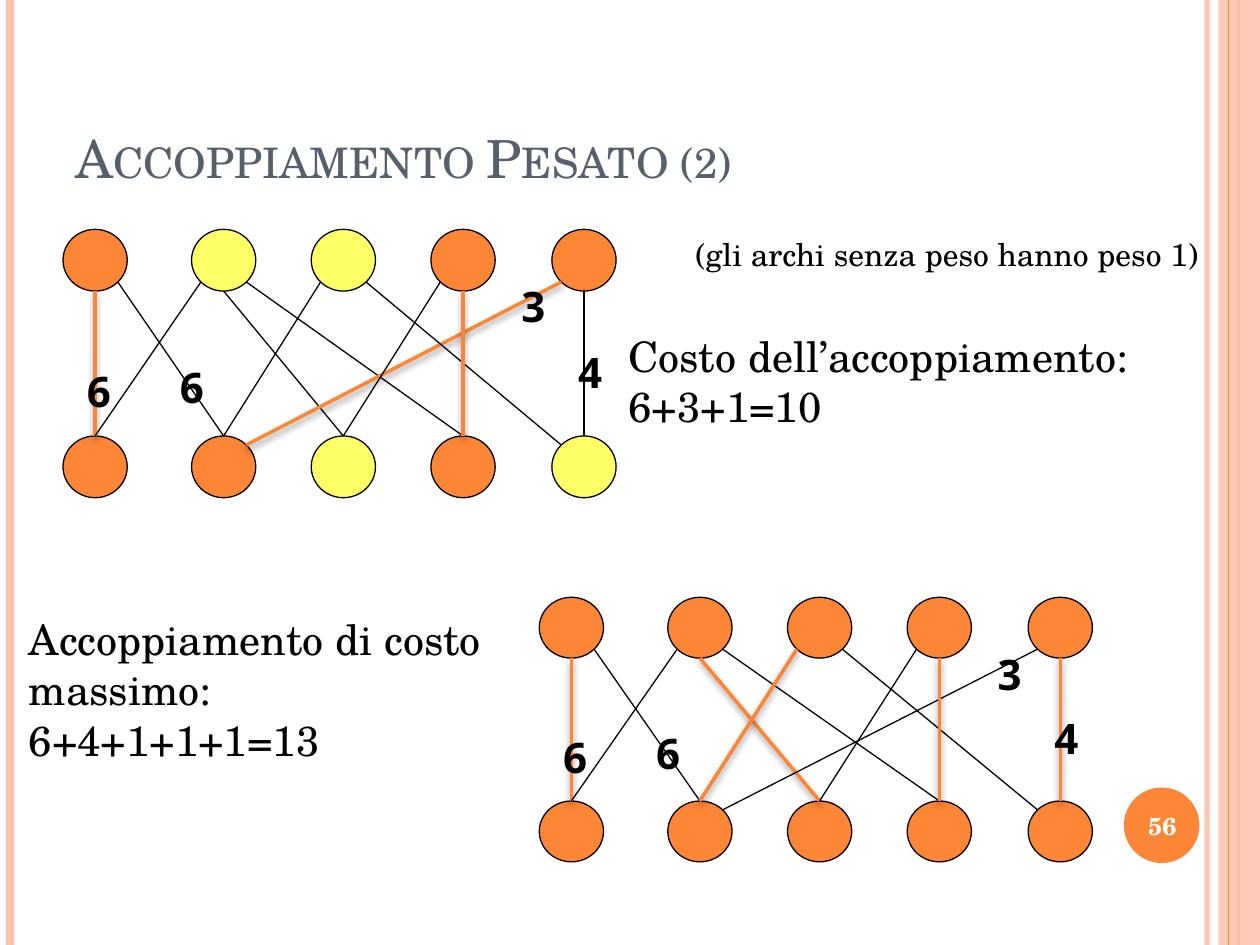
from math import cos, radians, sin

from lxml.etree import SubElement
from pptx import Presentation
from pptx.dml.color import RGBColor
from pptx.enum.shapes import MSO_CONNECTOR, MSO_SHAPE
from pptx.enum.text import MSO_ANCHOR, MSO_AUTO_SIZE, PP_ALIGN
from pptx.oxml.ns import qn
from pptx.util import Inches, Pt

ORANGE, PEACH, YELLOW = "FE8637", "FEC3AE", "FFFF66"
BLACK, WHITE, SLATE = "000000", "FFFFFF", "575F6D"
SERIF, SANS = "TeX Gyre Schola", "Noto Sans"

# Graph layout, relative to a box 2.13 inches high
GRAPH_HEIGHT = 2.13
NODE_WIDTH, NODE_HEIGHT = 0.51, 0.49
COLUMNS = [0, 1.02, 1.97, 2.92, 3.88]
# Angles on a node where edges attach, clockwise from the right
RIGHT_LOW, BOTTOM, LEFT_LOW = 45, 90, 135
LEFT_HIGH, TOP, RIGHT_HIGH = 225, 270, 315
# (upper node, lower node): (angle on the upper node, angle on the lower node)
EDGES = {
    (0, 1): (RIGHT_LOW, TOP),
    (0, 0): (BOTTOM, TOP),
    (1, 3): (RIGHT_LOW, TOP),
    (1, 2): (BOTTOM, TOP),
    (1, 0): (LEFT_LOW, TOP),
    (4, 1): (LEFT_LOW, RIGHT_HIGH),
    (4, 4): (BOTTOM, TOP),
    (2, 4): (RIGHT_LOW, LEFT_HIGH),
    (3, 2): (LEFT_LOW, TOP),
    (3, 3): (BOTTOM, TOP),
    (2, 1): (LEFT_LOW, TOP),
}
WEIGHTS = [("4", 3.99, 0.88), ("6", 0.09, 1.03), ("6", 0.83, 1.0), ("3", 3.54, 0.36)]


def rgb(color):
    return RGBColor.from_string(color)


def set_alpha(fill, percent):
    """Make a solid fill partly transparent."""
    color = fill.fore_color._xFill.find(qn("a:srgbClr"))
    SubElement(color, qn("a:alpha"), val=str(percent * 1000))


def add_line(shapes, start, end, color, width, alpha=100, shadow=False):
    line = shapes.add_connector(
        MSO_CONNECTOR.STRAIGHT, *(Inches(v) for v in (*start, *end)))
    line.line.color.rgb = rgb(color)
    line.line.width = Pt(width)
    if alpha < 100:
        set_alpha(line.line.fill, alpha)
    effects = SubElement(line._element.spPr, qn("a:effectLst"))
    if shadow:
        outer = SubElement(effects, qn("a:outerShdw"), blurRad=str(Pt(4)),
                           dist=str(Pt(2)), dir="5400000", rotWithShape="0")
        black = SubElement(outer, qn("a:srgbClr"), val=BLACK)
        SubElement(black, qn("a:alpha"), val="40000")


def add_shape(shapes, kind, box, fill, outline=None, alpha=100):
    shape = shapes.add_shape(kind, *(Inches(v) for v in box))
    shape.shadow.inherit = False
    shape.fill.solid()
    shape.fill.fore_color.rgb = rgb(fill)
    if alpha < 100:
        set_alpha(shape.fill, alpha)
    if outline:
        shape.line.color.rgb = rgb(outline)
        shape.line.width = Pt(0.75)
    else:
        shape.line.fill.background()


def add_text(shapes, box, lines, size, color=BLACK, font=SERIF, bold=False,
             wrap=True, grow=True, anchor=MSO_ANCHOR.TOP, align=PP_ALIGN.LEFT,
             small_caps=False):
    frame = shapes.add_textbox(*(Inches(v) for v in box)).text_frame
    frame.word_wrap = wrap
    frame.auto_size = MSO_AUTO_SIZE.SHAPE_TO_FIT_TEXT if grow else MSO_AUTO_SIZE.NONE
    frame.vertical_anchor = anchor
    for i, line in enumerate(lines):
        paragraph = frame.add_paragraph() if i else frame.paragraphs[0]
        paragraph.alignment = align
        run = paragraph.add_run()
        run.text = line
        run.font.size, run.font.bold, run.font.name = Pt(size), bold, font
        run.font.color.rgb = rgb(color)
        if small_caps:
            run.font._element.set("cap", "small")


def add_frame(slide, box):
    """Vertical stripes along both sides of the slide."""
    left, top, width, height = box
    right, bottom = left + width, top + height

    def stripe(x, *style):
        add_line(slide.shapes, (x, top), (x, bottom), *style)

    stripe(right - 0.42, PEACH, 3, 93)
    stripe(left + 0.08, PEACH, 4.5)
    stripe(right - 0.17, ORANGE, 1.5)
    add_shape(slide.shapes, MSO_SHAPE.RECTANGLE,
              (right - 0.33, top, 0.33, height), PEACH, alpha=87)
    stripe(right - 0.25, ORANGE, 0.75)


def add_page_number(slide, box, number):
    left, top, width, height = box
    add_shape(slide.shapes, MSO_SHAPE.OVAL, box, ORANGE)
    add_text(slide.shapes, (left - 0.03, top + 0.02, width + 0.07, height - 0.03),
             [number], 14, WHITE, bold=True, grow=False,
             anchor=MSO_ANCHOR.MIDDLE, align=PP_ALIGN.CENTER)


def add_graph(slide, box, matching):
    """Bipartite graph; matched edges and their nodes are orange."""
    left, top, _, height = box
    scale = height / GRAPH_HEIGHT
    node_height = NODE_HEIGHT * scale
    row_tops = [top, top + height - node_height]
    shapes = slide.shapes.add_group_shape().shapes

    def site(row, column, angle):
        return (left + COLUMNS[column] + NODE_WIDTH / 2 * (1 + cos(radians(angle))),
                row_tops[row] + node_height / 2 * (1 + sin(radians(angle))))

    # Nodes
    for row, row_top in enumerate(row_tops):
        matched = {edge[row] for edge in matching}
        for column, x in enumerate(COLUMNS):
            add_shape(shapes, MSO_SHAPE.OVAL,
                      (left + x, row_top, NODE_WIDTH, node_height),
                      ORANGE if column in matched else YELLOW, BLACK)
    # Edges
    for edge, (upper_angle, lower_angle) in EDGES.items():
        chosen = edge in matching
        add_line(shapes, site(0, edge[0], upper_angle), site(1, edge[1], lower_angle),
                 ORANGE if chosen else BLACK, 2 if chosen else 0.75, shadow=chosen)
    # Weights
    for weight, x, y in WEIGHTS:
        add_text(shapes, (left + x, top + y * scale, 0.31, 0.39 * scale),
                 [weight], 24, font=SANS, bold=True, wrap=False)


def main():
    deck = Presentation()
    deck.slide_width, deck.slide_height = Inches(10), Inches(7.5)
    slide = deck.slides.add_slide(deck.slide_layouts[6])

    add_frame(slide, (0, 0, 10, 7.5))
    add_page_number(slide, (8.92, 6.25, 0.6, 0.6), "56")
    add_text(slide.shapes, (0.5, 0.3, 8.17, 1.25), ["Accoppiamento Pesato (2)"],
             30, SLATE, grow=False, anchor=MSO_ANCHOR.BOTTOM, small_caps=True)

    # A matching of cost 10
    add_graph(slide, (0.5, 1.82, 4.39, 2.13), {(0, 0), (4, 1), (3, 3)})
    add_text(slide.shapes, (4.89, 2.57, 4.36, 0.91),
             ["Costo dell’accoppiamento:", "6+3+1=10"], 24)

    # The matching of maximum cost
    add_graph(slide, (4.28, 4.74, 4.39, 2.1),
              {(0, 0), (1, 2), (2, 1), (3, 3), (4, 4)})
    add_text(slide.shapes, (0.13, 4.82, 4.36, 1.31),
             ["Accoppiamento di costo massimo:", "6+4+1+1+1=13"], 24)

    add_text(slide.shapes, (5.42, 1.82, 4.24, 0.4),
             ["(gli archi senza peso hanno peso 1)"], 18, wrap=False)
    deck.save("out.pptx")


if __name__ == "__main__":
    main()
